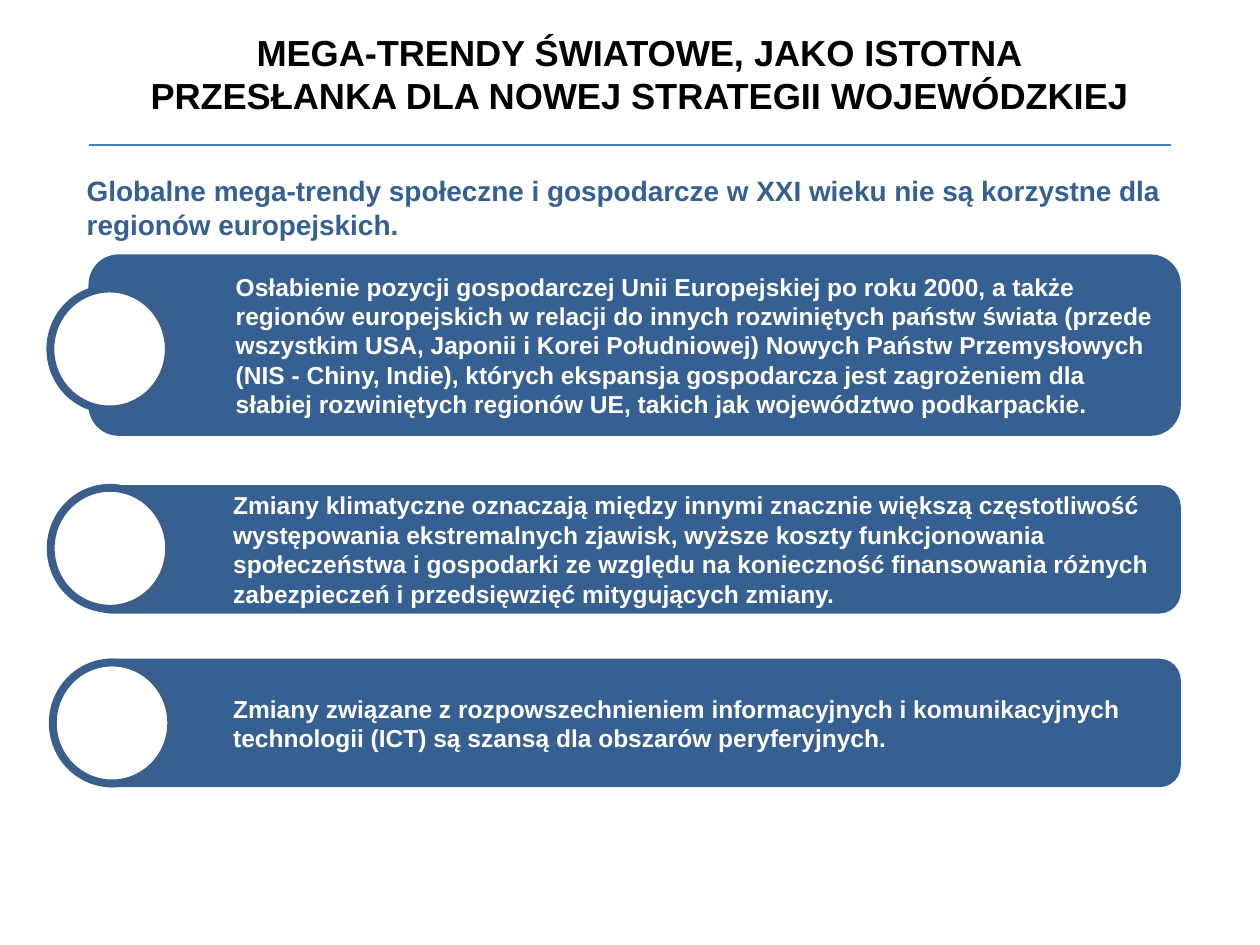
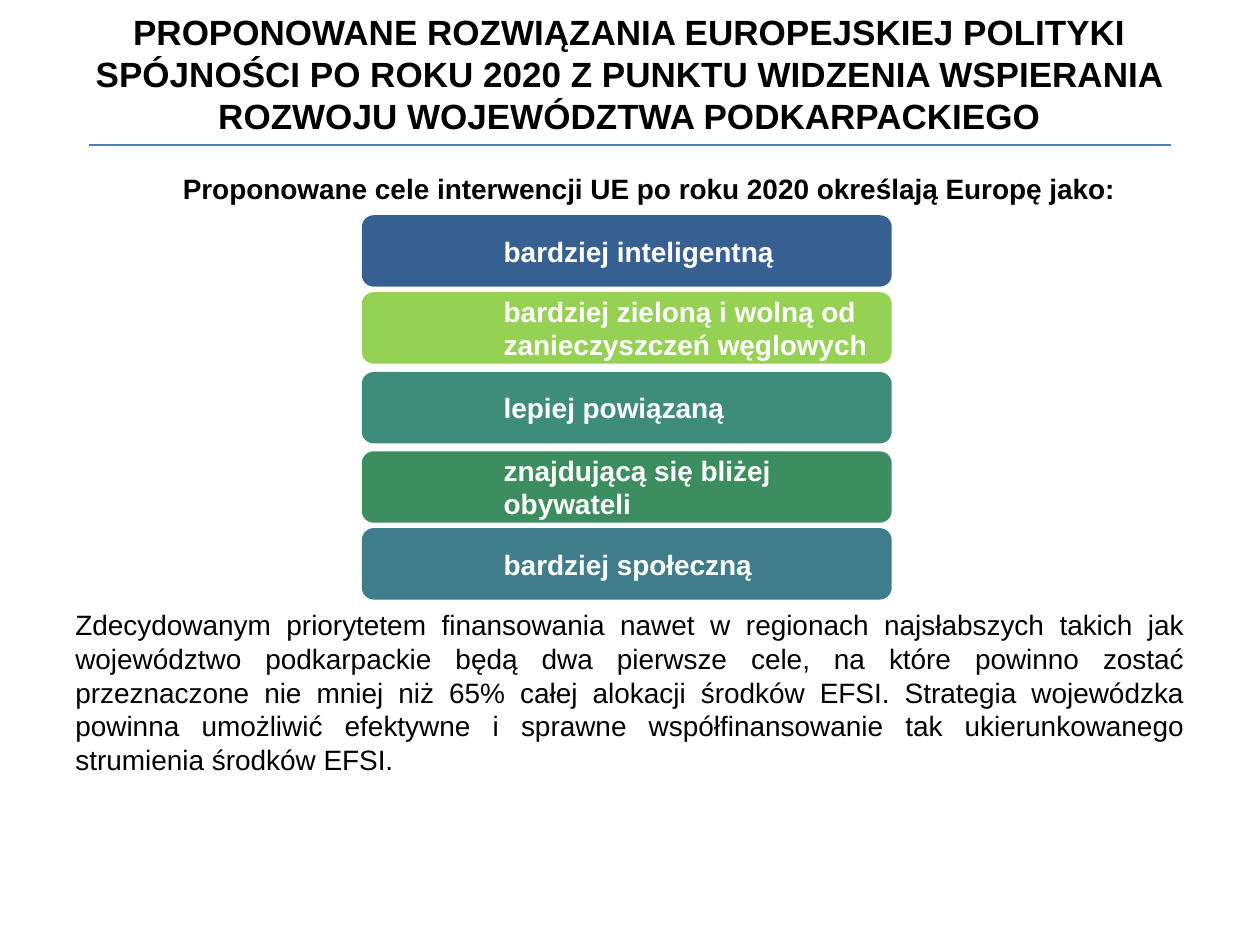
"""Build two slides on global mega-trends and European cohesion policy goals."""
from dataclasses import dataclass

from lxml.etree import SubElement
from pptx import Presentation
from pptx.dml.color import RGBColor as RGB
from pptx.enum.shapes import MSO_CONNECTOR as Link, MSO_SHAPE as Form
from pptx.enum.text import MSO_ANCHOR as Anchor, PP_ALIGN as Align
from pptx.oxml.ns import qn
from pptx.util import Pt


@dataclass(frozen=True)
class Theme:
    font: str = "Arial"
    black: str = "000000"
    white: str = "FFFFFF"
    blue: str = "376092"
    ring: str = "3A5F8C"
    rule: str = "4B7EBC"
    lime: str = "95D153"
    teal: str = "3D8D7A"
    green: str = "3C8E61"
    sea: str = "3F7D8B"
    body: float = 16
    small: float = 14


theme = Theme()


def write(shape, text, size, color, bold=True, align=Align.LEFT, anchor=Anchor.TOP, indent=0):
    frame = shape.text_frame
    frame.word_wrap = True
    frame.vertical_anchor = anchor
    frame.text = text
    para = frame.paragraphs[0]
    para.alignment = align
    if indent:
        props = para._p.get_or_add_pPr()
        props.set("marL", str(Pt(indent)))
        props.set("indent", "0")
    for run in para.runs:
        run.font.name = theme.font
        run.font.size = Pt(size)
        run.font.bold = bold
        run.font.color.rgb = RGB.from_string(color)


def draw(slide, form, left, top, width, height, fill):
    shape = slide.shapes.add_shape(form, Pt(left), Pt(top), Pt(width), Pt(height))
    shape.shadow.inherit = False
    shape.fill.solid()
    shape.fill.fore_color.rgb = RGB.from_string(fill)
    shape.line.fill.background()
    return shape


deck = Presentation()
deck.slide_width = Pt(720)
deck.slide_height = Pt(540)

heads = [
    ("MEGA-TRENDY ŚWIATOWE, JAKO ISTOTNA\vPRZESŁANKA DLA NOWEJ STRATEGII WOJEWÓDZKIEJ", 50.4, 20.7),
    ("PROPONOWANE ROZWIĄZANIA EUROPEJSKIEJ POLITYKI SPÓJNOŚCI PO ROKU 2020 "
     "Z PUNKTU WIDZENIA WSPIERANIA ROZWOJU WOJEWÓDZTWA PODKARPACKIEGO", 44.6, 20),
]
for text, left, size in heads:
    slide = deck.slides.add_slide(deck.slide_layouts[6])
    title = slide.shapes.add_textbox(Pt(left), Pt(0), Pt(630), Pt(84.2))
    write(title, text, size, theme.black, align=Align.CENTER, anchor=Anchor.MIDDLE)
    rule = slide.shapes.add_connector(Link.STRAIGHT, Pt(51), Pt(82.8), Pt(669), Pt(82.8))
    rule.line.color.rgb = RGB.from_string(theme.rule)
    rule.line.width = Pt(0.75)
    SubElement(rule._element.spPr, qn("a:effectLst"))

trends, goals = deck.slides

lead = trends.shapes.add_textbox(Pt(42.5), Pt(95.8), Pt(648), Pt(46))
write(lead, "Globalne mega-trendy społeczne i gospodarcze w XXI wieku nie są korzystne "
      "dla regionów europejskich.", theme.body, theme.blue)

cards = [
    (145.4, 103.7, 28.8, 164.9,
     "Osłabienie pozycji gospodarczej Unii Europejskiej po roku 2000, a także regionów europejskich "
     "w relacji do innych rozwiniętych państw świata (przede wszystkim USA, Japonii i Korei Południowej) "
     "Nowych Państw Przemysłowych (NIS - Chiny, Indie), których ekspansja gospodarcza jest zagrożeniem "
     "dla słabiej rozwiniętych regionów UE, takich jak województwo podkarpackie."),
    (277.2, 73.4, 29, 278.8,
     "Zmiany klimatyczne oznaczają między innymi znacznie większą częstotliwość występowania "
     "ekstremalnych zjawisk, wyższe koszty funkcjonowania społeczeństwa i gospodarki ze względu na "
     "konieczność finansowania różnych zabezpieczeń i przedsięwzięć mitygujących zmiany."),
    (376.4, 73.4, 30.2, 378.6,
     "Zmiany związane z rozpowszechnieniem informacyjnych i komunikacyjnych technologii (ICT) "
     "są szansą dla obszarów peryferyjnych."),
]
for top, height, left, peak, text in cards:
    card = draw(trends, Form.ROUNDED_RECTANGLE, 50.6, top, 624.2, height, theme.blue)
    write(card, text, theme.small, theme.white, anchor=Anchor.MIDDLE, indent=72)
    dot = draw(trends, Form.OVAL, left, peak, 67.7, 69.1, theme.white)
    dot.line.color.rgb = RGB.from_string(theme.ring)
    dot.line.width = Pt(4.5)

lead = goals.shapes.add_textbox(Pt(58), Pt(94.6), Pt(626), Pt(27))
write(lead, "Proponowane cele interwencji UE po roku 2020 określają Europę jako:",
      theme.body, theme.black, align=Align.CENTER)

aims = [
    (123, theme.blue, "bardziej inteligentną"),
    (167, theme.lime, "bardziej zieloną i wolną od zanieczyszczeń węglowych"),
    (212.6, theme.teal, "lepiej powiązaną"),
    (257.9, theme.green, "znajdującą się bliżej obywateli"),
    (301.8, theme.sea, "bardziej społeczną"),
]
for top, fill, text in aims:
    aim = draw(goals, Form.ROUNDED_RECTANGLE, 206.8, top, 302.8, 40.8, fill)
    write(aim, text, theme.body, theme.white, anchor=Anchor.MIDDLE, indent=72)

note = goals.shapes.add_textbox(Pt(36), Pt(343.8), Pt(648), Pt(106))
write(note, "Zdecydowanym priorytetem finansowania nawet w regionach najsłabszych takich jak województwo "
      "podkarpackie będą dwa pierwsze cele, na które powinno zostać przeznaczone nie mniej niż 65% całej "
      "alokacji środków EFSI. Strategia wojewódzka powinna umożliwić efektywne i sprawne współfinansowanie "
      "tak ukierunkowanego strumienia środków EFSI.",
      theme.body, theme.black, bold=False, align=Align.JUSTIFY)

deck.save("out.pptx")
